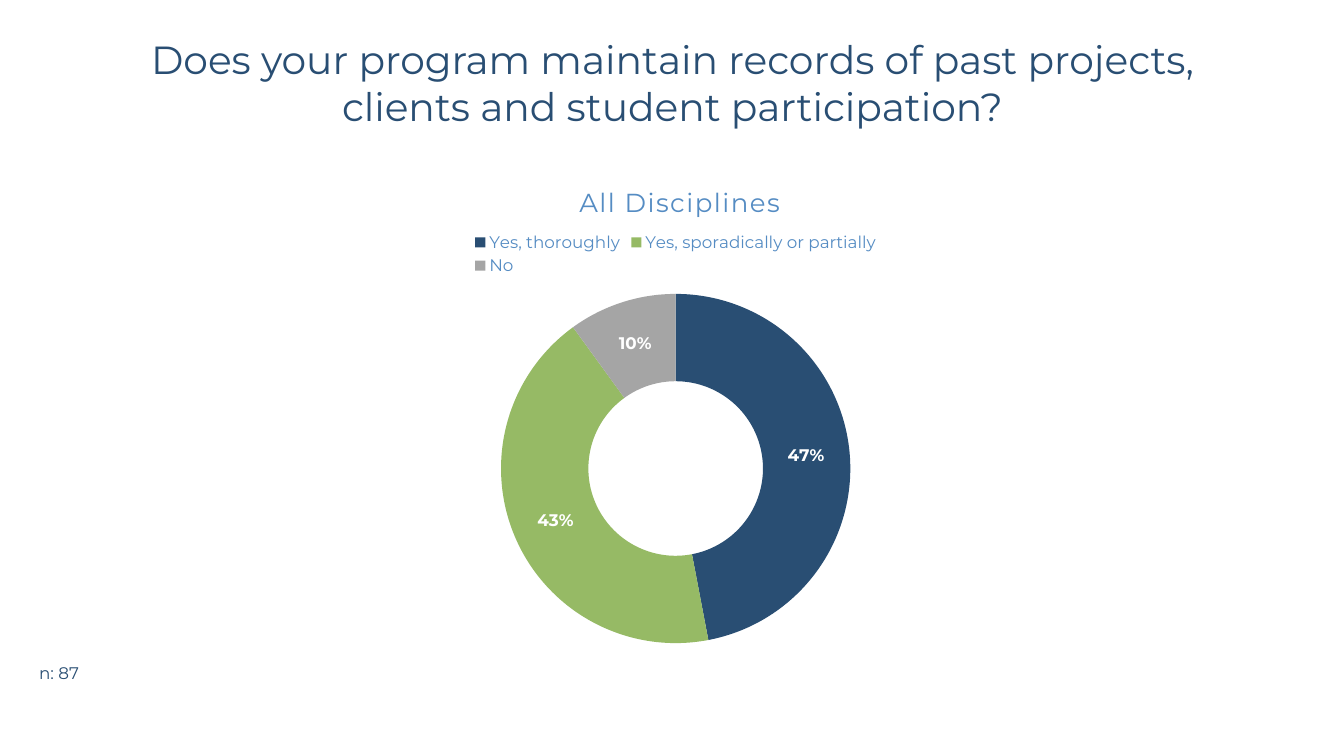
from lxml import etree
from pptx import Presentation
from pptx import util as u
from pptx.chart import data as chart_data
from pptx.dml.color import RGBColor
from pptx.enum import chart as chart_enum, text
from pptx.oxml import ns

PX = 9144  # one px is a hundredth of an inch
COLORS = {"navy": "294E73", "blue": "558CC3", "green": "96BA65",
          "gray": "A5A5A5", "white": "FFFFFF"}
ANSWERS = [("Yes, thoroughly", 47, "navy"),
           ("Yes, sporadically or partially", 43, "green"),
           ("No", 10, "gray")]


def px(*lengths):
    return [u.Emu(length * PX) for length in lengths]


def format_font(font, size, color, bold=False):
    font.name = "Montserrat"
    font.size = u.Pt(size)
    font.bold = bold
    font.color.rgb = RGBColor.from_string(COLORS[color])


def write_text(frame, words, size=12, color="navy", align=text.PP_ALIGN.LEFT, spacing=0):
    paragraph = frame.paragraphs[0]
    paragraph.alignment = align
    run = paragraph.add_run()
    run.text = words
    format_font(run.font, size, color)
    if spacing:
        run.font._element.set("spc", str(spacing))


def place_chart_part(part, index, **fractions):
    """Fix a chart part at fractions of the chart's width and height."""
    for old_layout in part.findall(ns.qn("c:layout")):
        part.remove(old_layout)
    layout = etree.Element(ns.qn("c:layout"))
    manual = etree.SubElement(layout, ns.qn("c:manualLayout"))
    if "inner" in fractions:
        etree.SubElement(manual, ns.qn("c:layoutTarget"), val=fractions.pop("inner"))
    for name in ("xMode", "yMode"):
        etree.SubElement(manual, ns.qn("c:" + name), val="edge")
    for name, value in fractions.items():
        etree.SubElement(manual, ns.qn("c:" + name), val=str(value))
    part.insert(index, layout)


def add_title(slide, left, top, width, height):
    title = slide.shapes.title
    title.left, title.top, title.width, title.height = px(left, top, width, height)
    frame = title.text_frame
    frame.word_wrap = True
    frame.vertical_anchor = text.MSO_ANCHOR.TOP
    frame.auto_size = text.MSO_AUTO_SIZE.SHAPE_TO_FIT_TEXT
    write_text(frame, "Does your program maintain records of past projects, "
               "clients and student participation?", size=28, align=text.PP_ALIGN.CENTER)


def add_answer_chart(slide, left, top, width, height):
    answers = chart_data.CategoryChartData()
    answers.categories = [name for name, _, _ in ANSWERS]
    answers.add_series("Series 1", [value for _, value, _ in ANSWERS])
    chart = slide.shapes.add_chart(chart_enum.XL_CHART_TYPE.DOUGHNUT,
                                   *px(left, top, width, height), answers).chart
    format_font(chart.font, 10, "navy")

    # Heading and legend
    chart.has_title = True
    write_text(chart.chart_title.text_frame, "All Disciplines", size=18.6, color="blue",
               align=text.PP_ALIGN.CENTER, spacing=100)
    place_chart_part(chart.chart_title._element, 1, x=0.37, y=0.04)
    chart.has_legend = True
    chart.legend.position = chart_enum.XL_LEGEND_POSITION.TOP
    chart.legend.include_in_layout = False
    format_font(chart.legend.font, 12, "blue")
    place_chart_part(chart.legend._element, 1, x=0.23, y=0.14, w=0.55, h=0.1)

    # Ring slices and percentages
    plot = chart.plots[0]
    plot.vary_by_categories = True
    place_chart_part(chart._chartSpace.chart.plotArea, 0,
                     inner="inner", x=0.27, y=0.27, w=0.47, h=0.7)
    series = plot.series[0]
    for index, (_, _, color) in enumerate(ANSWERS):
        fill = series.points[index].format.fill
        fill.solid()
        fill.fore_color.rgb = RGBColor.from_string(COLORS[color])
    labels = series.data_labels
    labels.show_percentage = True
    labels.show_value = False
    labels.number_format = "0%"
    labels.number_format_is_linked = False
    format_font(labels.font, 12, "white", bold=True)


def add_sample_size(slide, left, top, width, height):
    frame = slide.shapes.add_textbox(*px(left, top, width, height)).text_frame
    frame.word_wrap = True
    frame.auto_size = text.MSO_AUTO_SIZE.SHAPE_TO_FIT_TEXT
    write_text(frame, "n: 87")


def main():
    presentation = Presentation()
    presentation.slide_width, presentation.slide_height = px(1333, 750)
    slide = presentation.slides.add_slide(presentation.slide_layouts[5])
    add_sample_size(slide, 29, 653, 96, 30)
    add_answer_chart(slide, 295, 158, 743, 495)
    add_title(slide, 108, 30, 1118, 104)
    presentation.save("out.pptx")


if __name__ == "__main__":
    main()
